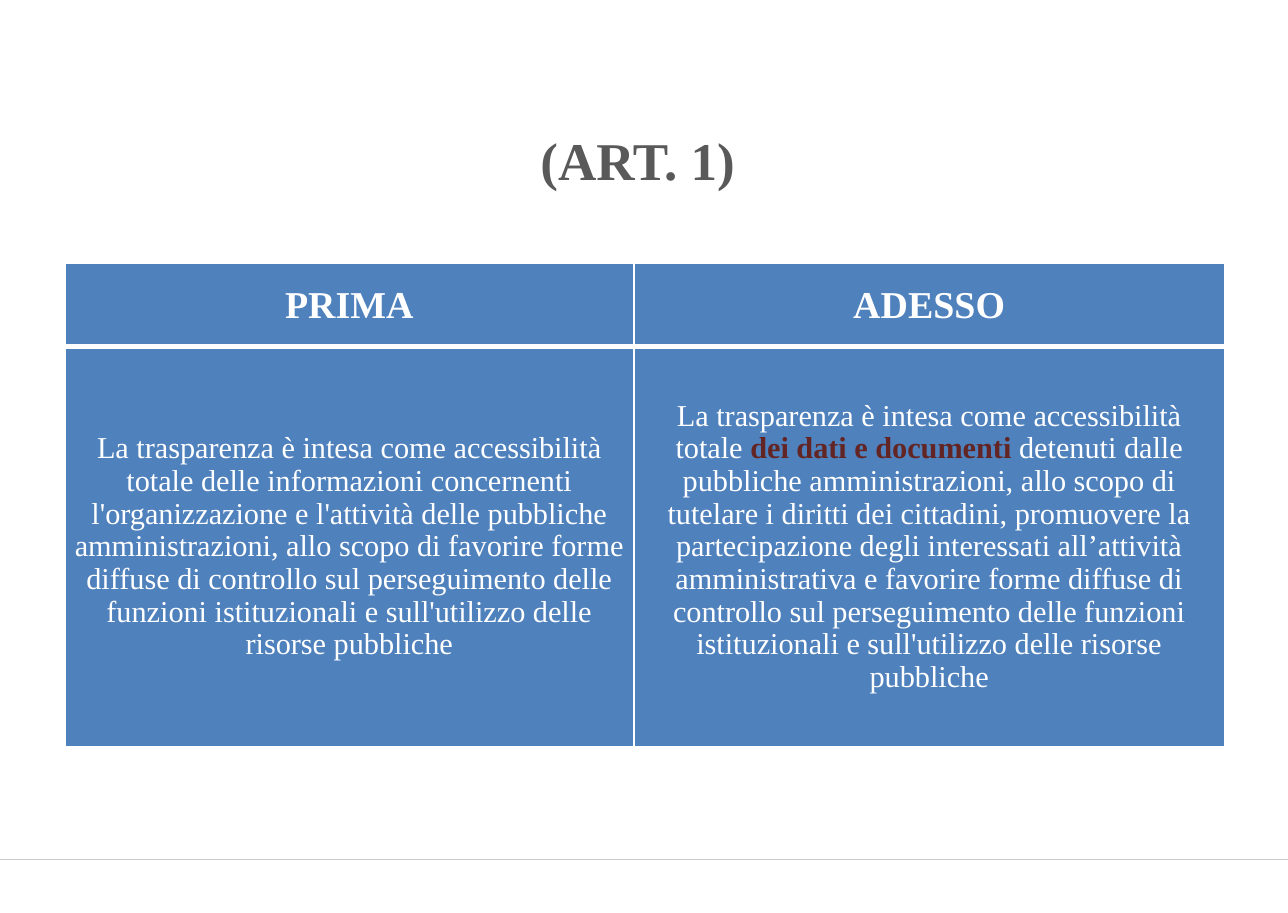
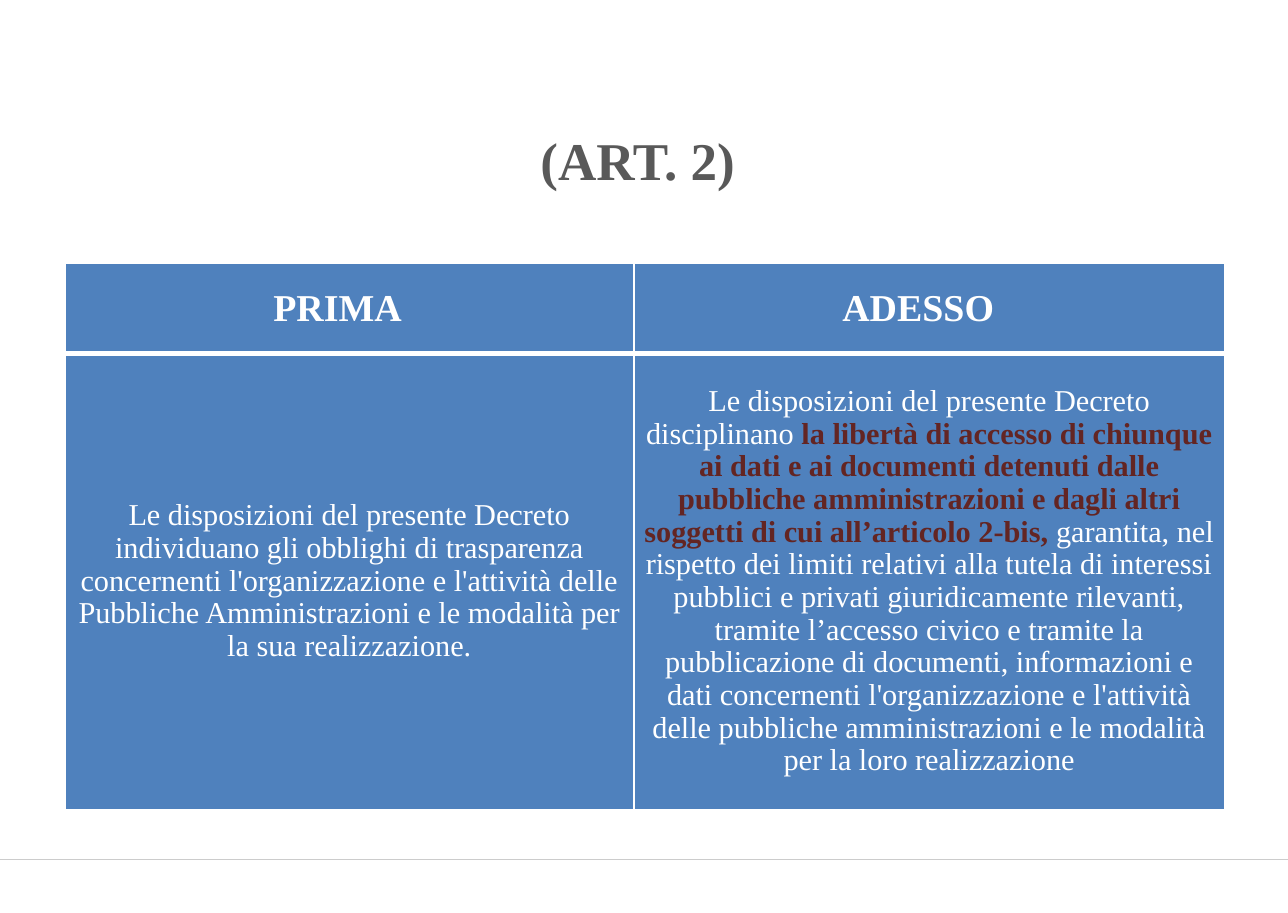
from dataclasses import dataclass

from lxml.etree import SubElement
from pptx import Presentation
from pptx.dml.color import RGBColor
from pptx.enum.shapes import MSO_CONNECTOR
from pptx.enum.text import MSO_ANCHOR, PP_ALIGN
from pptx.oxml.ns import qn
from pptx.slide import Slide
from pptx.table import _Cell
from pptx.util import Pt


@dataclass(frozen=True)
class Theme:
    font: str = "Times New Roman"
    title_color: str = "595959"
    cell_fill: str = "4F81BD"
    cell_text: str = "FFFFFF"
    emphasis: str = "632523"
    border: str = "FFFFFF"
    footer_rule: str = "CCCCCC"
    title_size: float = 28
    header_size: float = 20
    body_size: float = 16
    body_line_spacing: float = 0.97
    thin_border: float = 1
    thick_border: float = 3
    footer_rule_width: float = 0.25


@dataclass(frozen=True)
class Span:
    text: str
    emphasized: bool = False


@dataclass(frozen=True)
class HeaderStyle:
    align: PP_ALIGN
    indent: float


@dataclass(frozen=True)
class Comparison:
    title: str
    header_style: HeaderStyle
    row_heights: tuple[float, float]
    before: tuple[Span, ...]
    now: tuple[Span, ...]


THEME = Theme()
SLIDE_WIDTH, SLIDE_HEIGHT = 679.68, 481.68
FOOTER_RULE_TOP = 453.5
TABLE_LEFT, TABLE_TOP = 34.25, 139
COLUMN_WIDTHS = (300.25, 311.75)
BODY_INSET = 5
HEADERS = (Span("PRIMA"),), (Span("ADESSO"),)

COMPARISONS = (
    Comparison(
        "(ART. 1) ",
        HeaderStyle(PP_ALIGN.CENTER, 0),
        (44, 211),
        (
            Span(
                "La trasparenza è intesa come accessibilità totale delle informazioni "
                "concernenti l'organizzazione e l'attività delle pubbliche "
                "amministrazioni, allo scopo di favorire forme diffuse di controllo "
                "sul perseguimento delle funzioni istituzionali e sull'utilizzo delle "
                "risorse pubbliche"
            ),
        ),
        (
            Span("La trasparenza è intesa come accessibilità totale "),
            Span("dei dati e documenti ", True),
            Span(
                "detenuti dalle pubbliche amministrazioni, allo scopo di tutelare i "
                "diritti dei cittadini, promuovere la partecipazione degli interessati "
                "all’attività amministrativa e favorire forme diffuse di controllo sul "
                "perseguimento delle funzioni istituzionali e sull'utilizzo delle "
                "risorse pubbliche"
            ),
        ),
    ),
    Comparison(
        "(ART. 2) ",
        HeaderStyle(PP_ALIGN.JUSTIFY, 110),
        (47.5, 240.5),
        (
            Span(
                "Le disposizioni del presente Decreto individuano gli obblighi di "
                "trasparenza concernenti l'organizzazione e l'attività delle Pubbliche "
                "Amministrazioni e le modalità per la sua realizzazione."
            ),
        ),
        (
            Span("Le disposizioni del presente Decreto disciplinano "),
            Span(
                "la libertà di accesso di chiunque ai dati e ai documenti detenuti "
                "dalle pubbliche amministrazioni e dagli altri soggetti di cui "
                "all’articolo 2-bis, ",
                True,
            ),
            Span(
                "garantita, nel rispetto dei limiti relativi alla tutela di interessi "
                "pubblici e privati giuridicamente rilevanti, tramite l’accesso civico "
                "e tramite la pubblicazione di documenti, informazioni e dati "
                "concernenti l'organizzazione e l'attività delle pubbliche "
                "amministrazioni e le modalità per la loro realizzazione"
            ),
        ),
    ),
)


def style_run(run, size: float, color: str, bold: bool) -> None:
    run.font.name = THEME.font
    run.font.size = Pt(size)
    run.font.bold = bold
    run.font.color.rgb = RGBColor.from_string(color)


def add_footer_rule(slide: Slide) -> None:
    rule = slide.shapes.add_connector(
        MSO_CONNECTOR.STRAIGHT,
        Pt(0), Pt(FOOTER_RULE_TOP), Pt(SLIDE_WIDTH), Pt(FOOTER_RULE_TOP),
    )
    rule.line.color.rgb = RGBColor.from_string(THEME.footer_rule)
    rule.line.width = Pt(THEME.footer_rule_width)
    SubElement(rule._element.spPr, qn("a:effectLst"))


def add_title(slide: Slide, title: str) -> None:
    frame = slide.shapes.add_textbox(Pt(-1), Pt(67), Pt(682), Pt(34)).text_frame
    frame.word_wrap = True
    frame.margin_left = frame.margin_right = Pt(0)
    frame.margin_top = frame.margin_bottom = Pt(0)
    frame.text = title
    heading = frame.paragraphs[0]
    heading.alignment = PP_ALIGN.CENTER
    style_run(heading.runs[0], THEME.title_size, THEME.title_color, True)


def set_borders(cell: _Cell, top: float, bottom: float) -> None:
    properties = cell._tc.get_or_add_tcPr()
    thin = THEME.thin_border
    for side, width in (("L", thin), ("R", thin), ("T", top), ("B", bottom)):
        edge = SubElement(properties, qn(f"a:ln{side}"), w=str(Pt(width)))
        fill = SubElement(edge, qn("a:solidFill"))
        SubElement(fill, qn("a:srgbClr"), val=THEME.border)


def fill_cell(
    cell: _Cell,
    spans: tuple[Span, ...],
    is_header: bool,
    header_style: HeaderStyle,
) -> None:
    thin, thick = THEME.thin_border, THEME.thick_border
    set_borders(cell, *((thin, thick) if is_header else (thick, thin)))
    cell.fill.solid()
    cell.fill.fore_color.rgb = RGBColor.from_string(THEME.cell_fill)
    cell.vertical_anchor = MSO_ANCHOR.MIDDLE
    cell.margin_top = cell.margin_bottom = Pt(0)
    cell.margin_left = Pt(header_style.indent if is_header else BODY_INSET)
    cell.margin_right = Pt(0 if is_header else BODY_INSET)

    paragraph = cell.text_frame.paragraphs[0]
    paragraph.alignment = header_style.align if is_header else PP_ALIGN.CENTER
    if not is_header:
        paragraph.line_spacing = THEME.body_line_spacing
    size = THEME.header_size if is_header else THEME.body_size
    for span in spans:
        run = paragraph.add_run()
        run.text = span.text
        color = THEME.emphasis if span.emphasized else THEME.cell_text
        style_run(run, size, color, is_header or span.emphasized)


def add_comparison_table(slide: Slide, comparison: Comparison) -> None:
    rows = HEADERS, (comparison.before, comparison.now)
    table = slide.shapes.add_table(
        len(rows), len(COLUMN_WIDTHS), Pt(TABLE_LEFT), Pt(TABLE_TOP),
        Pt(sum(COLUMN_WIDTHS)), Pt(sum(comparison.row_heights)),
    ).table
    table.horz_banding = False
    for column, width in zip(table.columns, COLUMN_WIDTHS):
        column.width = Pt(width)
    for row_index, row in enumerate(rows):
        table.rows[row_index].height = Pt(comparison.row_heights[row_index])
        for column_index, spans in enumerate(row):
            fill_cell(
                table.cell(row_index, column_index), spans,
                row_index == 0, comparison.header_style,
            )


def main() -> None:
    presentation = Presentation()
    presentation.slide_width = Pt(SLIDE_WIDTH)
    presentation.slide_height = Pt(SLIDE_HEIGHT)
    blank_layout = presentation.slide_layouts[6]
    for comparison in COMPARISONS:
        slide = presentation.slides.add_slide(blank_layout)
        add_footer_rule(slide)
        add_title(slide, comparison.title)
        add_comparison_table(slide, comparison)
    presentation.save("out.pptx")


if __name__ == "__main__":
    main()
